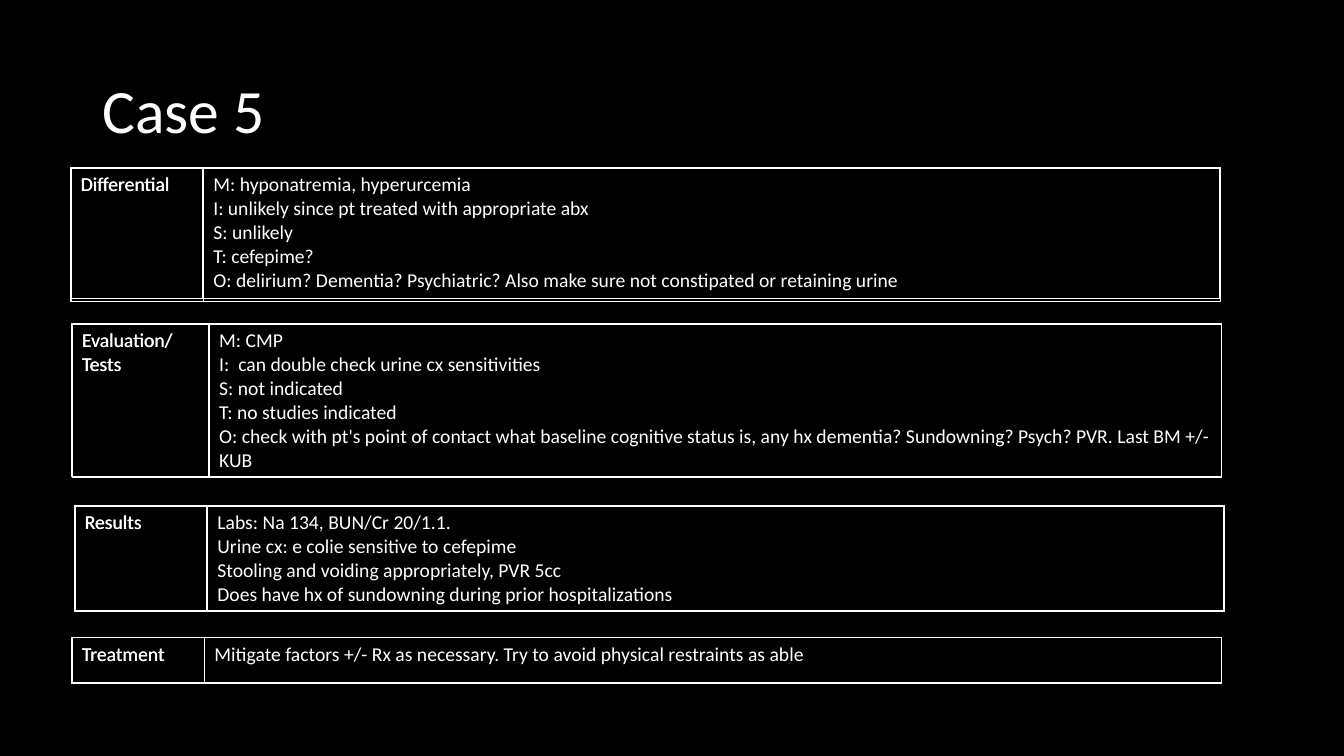
from dataclasses import dataclass
from typing import NamedTuple

from lxml import etree
from pptx import Presentation
from pptx.dml.color import RGBColor
from pptx.enum.text import MSO_ANCHOR
from pptx.oxml.ns import qn
from pptx.slide import Slide
from pptx.table import _Cell
from pptx.text.text import TextFrame
from pptx.util import Pt

MIDDLE = MSO_ANCHOR.MIDDLE
BLANK_LAYOUT = 6
TABLE_WIDTH = 821


@dataclass(frozen=True)
class Theme:
    background: RGBColor = RGBColor(0x00, 0x00, 0x00)
    foreground: RGBColor = RGBColor(0xFF, 0xFF, 0xFF)
    font: str = "Calibri"
    title_size: float = 44
    body_size: float = 14
    border_width: float = 1


class Place(NamedTuple):
    left: float
    top: float
    height: float


@dataclass(frozen=True)
class Section:
    """A question table with an empty answer, and the answered table over it."""
    question: Place
    answer: Place
    label_width: float
    label: str
    findings: str


THEME = Theme()

SECTIONS = (
    Section(Place(50.4, 119.6, 93.6), Place(50.7, 120.2, 95), 94.5, "Differential",
            "M: hyponatremia, hyperurcemia\n"
            "I: unlikely since pt treated with appropriate abx\n"
            "S: unlikely\n"
            "T: cefepime?\n"
            "O: delirium? Dementia? Psychiatric? Also make sure not constipated "
            "or retaining urine"),
    Section(Place(53.3, 361, 76.1), Place(53.6, 361.4, 74.5), 94.5, "Results",
            "Labs: Na 134, BUN/Cr 20/1.1.\n"
            "Urine cx: e colie sensitive to cefepime\n"
            "Stooling and voiding appropriately, PVR 5cc\n"
            "Does have hx of sundowning during prior hospitalizations"),
    Section(Place(51.3, 231.1, 109.4), Place(51.6, 231.6, 109.4), 97.8,
            "Evaluation/\nTests",
            "M: CMP\n"
            "I:  can double check urine cx sensitivities\n"
            "S: not indicated\n"
            "T: no studies indicated\n"
            "O: check with pt's point of contact what baseline cognitive status is, "
            "any hx dementia? Sundowning? Psych? PVR. Last BM +/- KUB"),
    Section(Place(51.3, 455.6, 32.3), Place(51.5, 455.6, 32.3), 94.5, "Treatment",
            "Mitigate factors +/- Rx as necessary. "
            "Try to avoid physical restraints as able"),
)


def write_text(tf: TextFrame, text: str, size: float) -> None:
    tf.text = text
    for p in tf.paragraphs:
        p.font.size = Pt(size)
        for r in p.runs:
            r.font.name = THEME.font
            r.font.size = Pt(size)
            r.font.color.rgb = THEME.foreground


def add_borders(cell: _Cell) -> None:
    """Outline all four sides; must run before the cell's fill is set."""
    properties = cell._tc.get_or_add_tcPr()
    for side in ("lnL", "lnR", "lnT", "lnB"):
        line = etree.SubElement(properties, qn(f"a:{side}"),
                                w=str(Pt(THEME.border_width)))
        fill = etree.SubElement(line, qn("a:solidFill"))
        etree.SubElement(fill, qn("a:srgbClr"), val=str(THEME.foreground))


def add_title(s: Slide, text: str) -> None:
    title = s.shapes.add_textbox(Pt(66), Pt(28.8), Pt(828), Pt(104.4))
    tf = title.text_frame
    tf.word_wrap = True
    tf.vertical_anchor = MIDDLE
    write_text(tf, text, THEME.title_size)
    tf.paragraphs[0].line_spacing = 0.9


def add_case_table(s: Slide, place: Place, label_width: float,
                   label: str, findings: str) -> None:
    frame = s.shapes.add_table(1, 2, Pt(place.left), Pt(place.top),
                               Pt(TABLE_WIDTH), Pt(place.height))
    table = frame.table
    table.first_row = False
    table.horz_banding = False
    table.columns[0].width = Pt(label_width)
    table.columns[1].width = Pt(TABLE_WIDTH - label_width)
    for cell, text in zip(table.rows[0].cells, (label, findings)):
        write_text(cell.text_frame, text, THEME.body_size)
        add_borders(cell)
        cell.fill.background()


def main() -> None:
    prs = Presentation()
    prs.slide_width, prs.slide_height = Pt(960), Pt(540)
    s = prs.slides.add_slide(prs.slide_layouts[BLANK_LAYOUT])
    s.background.fill.solid()
    s.background.fill.fore_color.rgb = THEME.background
    add_title(s, "Case 5")
    for section in SECTIONS:
        add_case_table(s, section.question, section.label_width, section.label, "")
    for section in SECTIONS:
        add_case_table(s, section.answer, section.label_width, section.label,
                       section.findings)
    prs.save("out.pptx")


if __name__ == "__main__":
    main()
